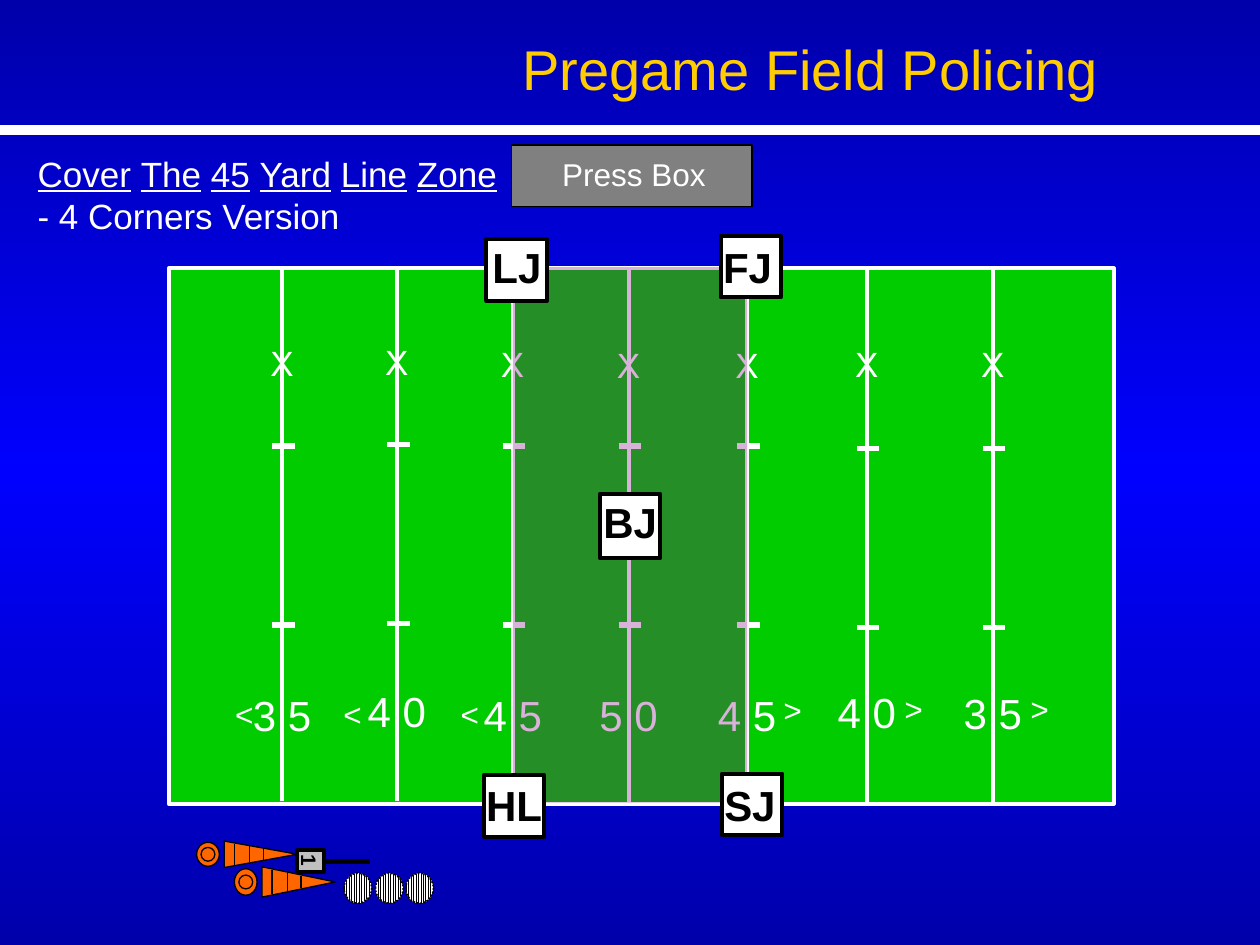
from copy import deepcopy
from pptx import Presentation
from pptx import util as u
from pptx.dml.color import RGBColor
from pptx.enum import dml, shapes, text
from pptx.oxml import parse_xml
from pptx.oxml.ns import nsdecls, qn

WHITE, BLACK, ORANGE = "FFFFFF", "000000", "FF6600"
RECT, OVAL = shapes.MSO_SHAPE.RECTANGLE, shapes.MSO_SHAPE.OVAL
TRIANGLE = shapes.MSO_SHAPE.ISOSCELES_TRIANGLE
ALIGN = {"l": text.PP_ALIGN.LEFT, "c": text.PP_ALIGN.CENTER, "r": text.PP_ALIGN.RIGHT}

# yard line x, its top, number, number top, first hash mark, X top
YARDS = [
    (2.24, 2.11, "3 5", 5.42, 3.54, 2.66),
    (3.15, 2.11, "4 0", 5.39, 3.53, 2.65),
    (4.07, 2.11, "4 5", 5.42, 3.54, 2.67),
    (4.99, 2.13, "5 0", 5.42, 3.54, 2.68),
    (5.93, 2.13, "4 5", 5.42, 3.54, 2.68),
    (6.88, 2.13, "4 0", 5.40, 3.56, 2.67),
    (7.88, 2.13, "3 5", 5.41, 3.56, 2.67),
]
# name, box left, top and height, label left, top and width
OFFICIALS = [
    ("HL", 3.84, 6.15, 0.49, 3.76, 6.14, 0.67),
    ("SJ", 5.73, 6.14, 0.49, 5.65, 6.14, 0.67),
    ("LJ", 3.86, 1.90, 0.49, 3.81, 1.87, 0.76),
    ("FJ", 5.72, 1.87, 0.49, 5.64, 1.87, 0.67),
    ("BJ", 4.76, 3.92, 0.51, 4.69, 3.89, 0.66),
]


def cm(*inches):
    """Field measures are in inches; the slide takes centimetres."""
    return [u.Cm(2.54 * v) for v in inches]


def rgb(color):
    return RGBColor.from_string(color)


def set_line(line, color, width):
    line.color.rgb = rgb(color)
    line.width = u.Pt(width)


def add_line(parent, x1, y1, x2, y2, color=WHITE, width=2.25):
    ln = parent.add_connector(shapes.MSO_CONNECTOR.STRAIGHT, *cm(x1, y1, x2, y2))
    set_line(ln.line, color, width)
    ln._element.spPr.append(parse_xml(f"<a:effectLst {nsdecls('a')}/>"))


def add_box(parent, kind, x, y, w, h, fill=None, line=BLACK, width=0.75, rot=0):
    sp = parent.add_shape(kind, *cm(x, y, w, h))
    sp.shadow.inherit = False
    sp.rotation = rot
    if fill:
        sp.fill.solid()
        sp.fill.fore_color.rgb = rgb(fill)
    else:
        sp.fill.background()
    if line:
        set_line(sp.line, line, width)
    else:
        sp.line.fill.background()
    return sp


def add_run(p, words, color=WHITE, **fmt):
    r = p.add_run()
    r.text = words
    r.font.color.rgb = rgb(color)
    for key, value in {"name": "Arial", "size": u.Pt(18), **fmt}.items():
        setattr(r.font, key, value)


def add_text(parent, x, y, w, h, words="", align="l", wrap=False, rot=0, **fmt):
    sp = parent.add_textbox(*cm(x, y, w, h))
    sp.rotation = rot
    tf = sp.text_frame
    tf.word_wrap = wrap
    tf.auto_size = text.MSO_AUTO_SIZE.SHAPE_TO_FIT_TEXT
    p = tf.paragraphs[0]
    p.alignment = ALIGN[align]
    if words:
        add_run(p, words, **fmt)
    return tf


def set_background(s):
    fill = s.background.fill
    fill.gradient()
    fill.gradient_angle = 90
    stops = s.element.find(".//" + qn("a:gsLst"))
    stops.insert(1, deepcopy(stops[0]))
    for stop, color, pos in zip(fill.gradient_stops, ("0000AA", "0000FF", "0000AA"), (0, 0.5, 1)):
        stop.color.rgb = rgb(color)
        stop.position = pos


def set_title(s, words):
    sp = s.shapes.title
    sp.left, sp.top, sp.width, sp.height = cm(3, 0.22, 6.87, 0.64)
    tf = sp.text_frame
    tf.auto_size = text.MSO_AUTO_SIZE.NONE
    tf.vertical_anchor = text.MSO_ANCHOR.TOP
    p = tf.paragraphs[0]
    p.alignment = ALIGN["c"]
    add_run(p, words, "FFCC00", size=u.Pt(32))


def add_heading(sh):
    tf = add_text(sh, 0.2, 1.16, 3.86, 1.6)
    size = u.Pt(20)
    for i, word in enumerate("Cover The 45 Yard Line Zone".split()):
        if i:
            add_run(tf.paragraphs[0], " ", size=size)
        add_run(tf.paragraphs[0], word, size=size, underline=True)
    add_run(tf.add_paragraph(), "- 4 Corners Version", size=size)


def add_field(sh):
    add_box(sh, RECT, 1.34, 2.13, 7.5, 4.25, "00CC00", WHITE, 2.25)
    for x, top, number, number_y, hash_y, cross_y in YARDS:
        add_line(sh, x, top, x, top + 4.25)
        add_text(sh, x - 0.43, number_y, 0.76, 0.5, number, "r", True, size=u.Pt(24))
        for y in (hash_y, hash_y + 1.42):
            add_line(sh, x - 0.08, y, x + 0.1, y, width=3)
        add_text(sh, x - 0.2, cross_y, 0.39, 0.43, "X", "r", size=u.Pt(20))


def add_arrows(sh):
    for x in (1.76, 2.62, 3.55):
        add_text(sh, x, 5.47, 0.35, 0.4, "<", "r")
    add_text(sh, 6.12, 5.47, 0.35, 0.4, "<", "r", rot=180)
    for x in (7.08, 8.08):
        tf = add_text(sh, x, 5.46, 0.35, 0.4, "<", "r")
        tf._txBody.bodyPr.set("rot", "10800000")  # turns the text, not its box


def add_cone(sh, x, y, h, base):
    """Cone lying on its side, centred at x, y, with its round base to the left."""
    g = sh.add_group_shape().shapes
    add_box(g, TRIANGLE, x - h / 2, y - 0.29, h, 0.58, ORANGE, rot=90)
    add_box(g, OVAL, x - 0.42 - base / 2, y - 0.09, base, 0.18, ORANGE, rot=90)
    for dx, part in ((-0.09, 0.31), (-0.21, 0.39), (0.02, 0.21)):
        add_line(g, x + dx, y - h * part, x + dx, y + h * part, BLACK, 0.75)
    add_box(g, OVAL, x - 0.42 - 0.055, y - 0.055, 0.11, 0.11, rot=90)


def add_down_marker(sh):
    g = sh.add_group_shape().shapes
    add_box(g, RECT, 2.38, 6.73, 0.17, 0.21, "C0C0C0", width=2.25, rot=90)
    add_text(g, 2.31, 6.68, 0.29, 0.3, "1", rot=90, color=BLACK, size=u.Pt(12), bold=True)
    add_line(g, 2.94, 6.84, 2.58, 6.84, BLACK, 3)


def add_balls(sh):
    g = sh.add_group_shape().shapes
    for x in (2.73, 2.98, 3.22):
        sp = add_box(g, OVAL, x, 6.93, 0.22, 0.24, width=1)
        sp.line.dash_style = dml.MSO_LINE.ROUND_DOT
        sp.fill.patterned()
        sp.fill.pattern = dml.MSO_PATTERN.LIGHT_VERTICAL
        sp.fill.fore_color.rgb = rgb(BLACK)
        sp.fill.back_color.rgb = rgb(WHITE)


def add_zone(sh):
    sp = add_box(sh, RECT, 4.07, 2.12, 1.86, 4.25, "800080", None)
    color = sp._element.spPr.find(".//" + qn("a:srgbClr"))
    color.append(parse_xml(f'<a:alpha {nsdecls("a")} val="30000"/>'))


def add_official(sh, name, x, y, h, label_x, label_y, label_w):
    g = sh.add_group_shape().shapes
    add_box(g, RECT, x, y, 0.48, h, WHITE, width=2.25)
    add_text(g, label_x, label_y, label_w, 0.5, name, wrap=True,
             color=BLACK, size=u.Pt(24), bold=True)


def main():
    prs = Presentation()
    prs.slide_width, prs.slide_height = cm(10, 7.5)
    s = prs.slides.add_slide(prs.slide_layouts[5])
    sh = s.shapes
    set_background(s)
    set_title(s, "Pregame Field Policing")
    add_line(sh, 0, 1.03, 10, 1.03, width=6)
    add_box(sh, RECT, 4.77, 0.44, 0.49, 1.91, "808080", rot=270)
    add_heading(sh)
    add_text(sh, 4.36, 1.18, 1.34, 0.4, "Press Box", "r")
    add_field(sh)
    add_arrows(sh)
    add_cone(sh, 2.37, 7, 0.24, 0.21)
    add_down_marker(sh)
    add_cone(sh, 2.07, 6.78, 0.21, 0.19)
    add_balls(sh)
    add_zone(sh)
    for official in OFFICIALS:
        add_official(sh, *official)
    prs.save("out.pptx")


if __name__ == "__main__":
    main()
